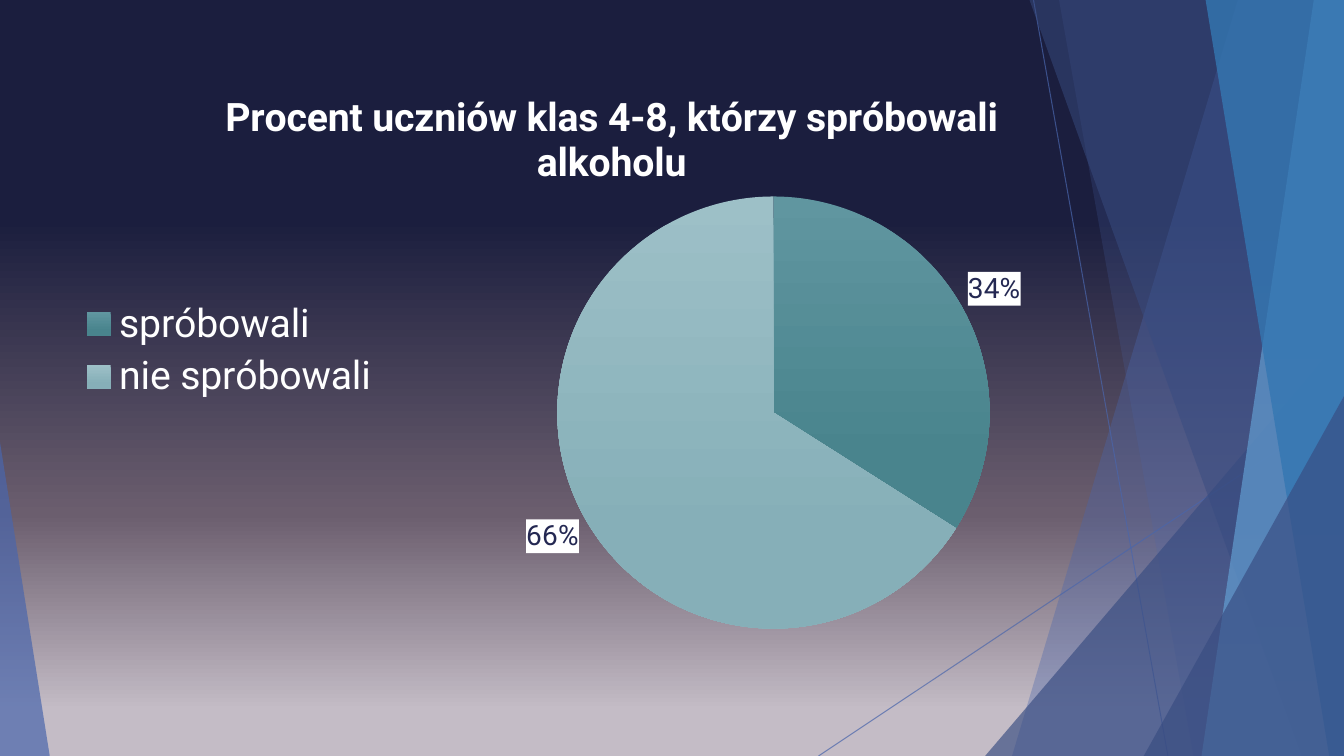
import copy

from pptx import Presentation
from pptx import util as u
from pptx.chart.data import CategoryChartData
from pptx.dml.color import RGBColor
from pptx.enum import chart as charts
from pptx.enum import shapes
from pptx.oxml import parse_xml
from pptx.oxml.ns import nsdecls, qn
from pptx.oxml.xmlchemy import OxmlElement

WIDTH, HEIGHT = u.Inches(13.33), u.Inches(7.5)
FONT = "Roboto"
BLUE, NAVY, SKY, OCEAN = "4A66AC", "384C81", "629DD1", "3477B2"
TITLE = "Procent uczniów klas 4-8, którzy spróbowali alkoholu"
ANSWERS = [
    ("spróbowali", 0.34, [(0, "6096A0"), (78, "49848D")]),
    ("nie spróbowali", 0.66, [(0, "9DC0C7"), (78, "86AFB8")]),
]


def across(share):
    """Turn a percentage of the slide's width into a length."""
    return int(WIDTH * share / 100)


def down(share):
    """Turn a percentage of the slide's height into a length."""
    return int(HEIGHT * share / 100)


def paint(color_format, color):
    """Apply a hex colour."""
    color_format.rgb = RGBColor.from_string(color)


def set_opacity(shape, opacity):
    """Make the solid colour of a shape or line partly transparent."""
    color = shape._element.spPr.find(".//" + qn("a:srgbClr"))
    alpha = OxmlElement("a:alpha")
    alpha.set("val", str(opacity * 1000))
    color.append(alpha)


def fill_gradient(fill, stops, angle):
    """Fill with a linear gradient of (percent, hex) stops."""
    fill.gradient()
    fill.gradient_angle = angle
    while len(fill.gradient_stops) < len(stops):
        last = fill.gradient_stops[-1]._gs
        last.addnext(copy.deepcopy(last))
    for stop, (percent, color) in zip(fill.gradient_stops, stops):
        stop.position = percent / 100
        paint(stop.color, color)


def finish_facet(shape, color, opacity):
    """Give a facet its flat translucent look."""
    shape.shadow.inherit = False
    shape.fill.solid()
    paint(shape.fill.fore_color, color)
    shape.line.fill.background()
    set_opacity(shape, opacity)


def add_ray(page, start, end):
    """Draw a thin translucent line between two points."""
    ray = page.shapes.add_connector(
        shapes.MSO_CONNECTOR.STRAIGHT,
        across(start[0]), down(start[1]), across(end[0]), down(end[1]))
    ray.line.width = u.Pt(0.75)
    paint(ray.line.color, BLUE)
    set_opacity(ray, 70)
    ray._element.spPr.append(OxmlElement("a:effectLst"))


def add_facet(page, top, bottom, color, opacity):
    """Draw a full-height facet from a slanted edge to the right border."""
    builder = page.shapes.build_freeform(across(top), 0)
    builder.add_line_segments(
        [(WIDTH, 0), (WIDTH, HEIGHT), (across(bottom), HEIGHT)], close=True)
    finish_facet(builder.convert_to_shape(), color, opacity)


def add_corner(page, left, top, width, apex, color, opacity):
    """Draw a triangle standing on the slide's bottom edge."""
    corner = page.shapes.add_shape(
        shapes.MSO_SHAPE.ISOSCELES_TRIANGLE,
        across(left), down(top), across(width), HEIGHT - down(top))
    corner.adjustments[0] = apex
    finish_facet(corner, color, opacity)


def style_font(font, size, color, bold=False):
    """Set the face, size, colour and weight of a font."""
    font.name = FONT
    font.size = u.Pt(size)
    font.bold = bold
    paint(font.color, color)


def place_part(part, index, target=None, **shares):
    """Give a chart part a manual layout in shares of the chart."""
    for old in part.findall(qn("c:layout")):
        part.remove(old)
    layout, manual = OxmlElement("c:layout"), OxmlElement("c:manualLayout")
    layout.append(manual)
    settings = {"layoutTarget": target} if target else {}
    settings.update(xMode="edge", yMode="edge", **shares)
    for name, value in settings.items():
        setting = OxmlElement("c:" + name)
        setting.set("val", str(value))
        manual.append(setting)
    part.insert(index, layout)


def style_labels(plot):
    """Show percentages on white boxes outside the pie."""
    plot.has_data_labels = True
    labels = plot.data_labels
    labels.show_value = True
    labels.show_percentage = False
    labels.number_format = "0%"
    labels.number_format_is_linked = False
    labels.position = charts.XL_LABEL_POSITION.OUTSIDE_END
    style_font(labels.font, 20, "242852")
    box = parse_xml(
        f'<c:spPr {nsdecls("c", "a")}><a:solidFill><a:srgbClr val="FFFFFF"/>'
        "</a:solidFill><a:ln><a:noFill/></a:ln></c:spPr>")
    labels._element.find(qn("c:txPr")).addprevious(box)


def add_pie(page):
    """Add the pie chart of the pupils' answers."""
    data = CategoryChartData(number_format="0%")
    data.categories = [name for name, _, _ in ANSWERS]
    data.add_series("Series 1", [value for _, value, _ in ANSWERS])
    chart = page.shapes.add_chart(
        charts.XL_CHART_TYPE.PIE, across(4.9), down(7.2),
        across(81), down(78.3), data).chart
    style_font(chart.font, 10, "000000")

    chart.has_title = True
    chart.chart_title.text_frame.text = TITLE
    span = chart.chart_title.text_frame.paragraphs[0].runs[0]
    style_font(span.font, 28, "FFFFFF", bold=True)
    place_part(chart.chart_title._element, 1, x=0.14, y=0.05)

    chart.has_legend = True
    chart.legend.position = charts.XL_LEGEND_POSITION.LEFT
    chart.legend.include_in_layout = False
    style_font(chart.legend.font, 28, "FFFFFF")

    plot = chart.plots[0]
    plot.vary_by_categories = True
    place_part(chart._chartSpace.chart.plotArea, 0, "inner",
               x=0.45, y=0.24, w=0.4, h=0.73)
    for index, (_, _, stops) in enumerate(ANSWERS):
        slice_format = plot.series[0].points[index].format
        fill_gradient(slice_format.fill, stops, 270)
        slice_format.line.fill.background()
    style_labels(plot)


def main():
    """Build the slide and save the deck."""
    deck = Presentation()
    deck.slide_width, deck.slide_height = WIDTH, HEIGHT
    page = deck.slides.add_slide(deck.slide_layouts[6])
    fill_gradient(page.background.fill,
                  [(6, "C4BCC6"), (32, "6B5E6E"), (71, "1B1E3E")], 90)
    add_ray(page, (76.9, 0), (86.9, 100))
    add_ray(page, (100, 53.7), (60.9, 100))
    add_facet(page, 92.1, 75.3, BLUE, 36)
    add_facet(page, 78.8, 88.8, BLUE, 20)
    add_corner(page, 73.3, 44.4, 26.7, 1, NAVY, 66)
    add_facet(page, 76.6, 96.85, NAVY, 50)
    add_facet(page, 97.75, 89.4, SKY, 70)
    add_facet(page, 89.7, 98.9, OCEAN, 80)
    add_corner(page, 85.1, 52.4, 14.9, 1, NAVY, 66)
    add_corner(page, 0, 58.5, 3.7, 0, BLUE, 70)
    add_pie(page)
    deck.save("out.pptx")


if __name__ == "__main__":
    main()
